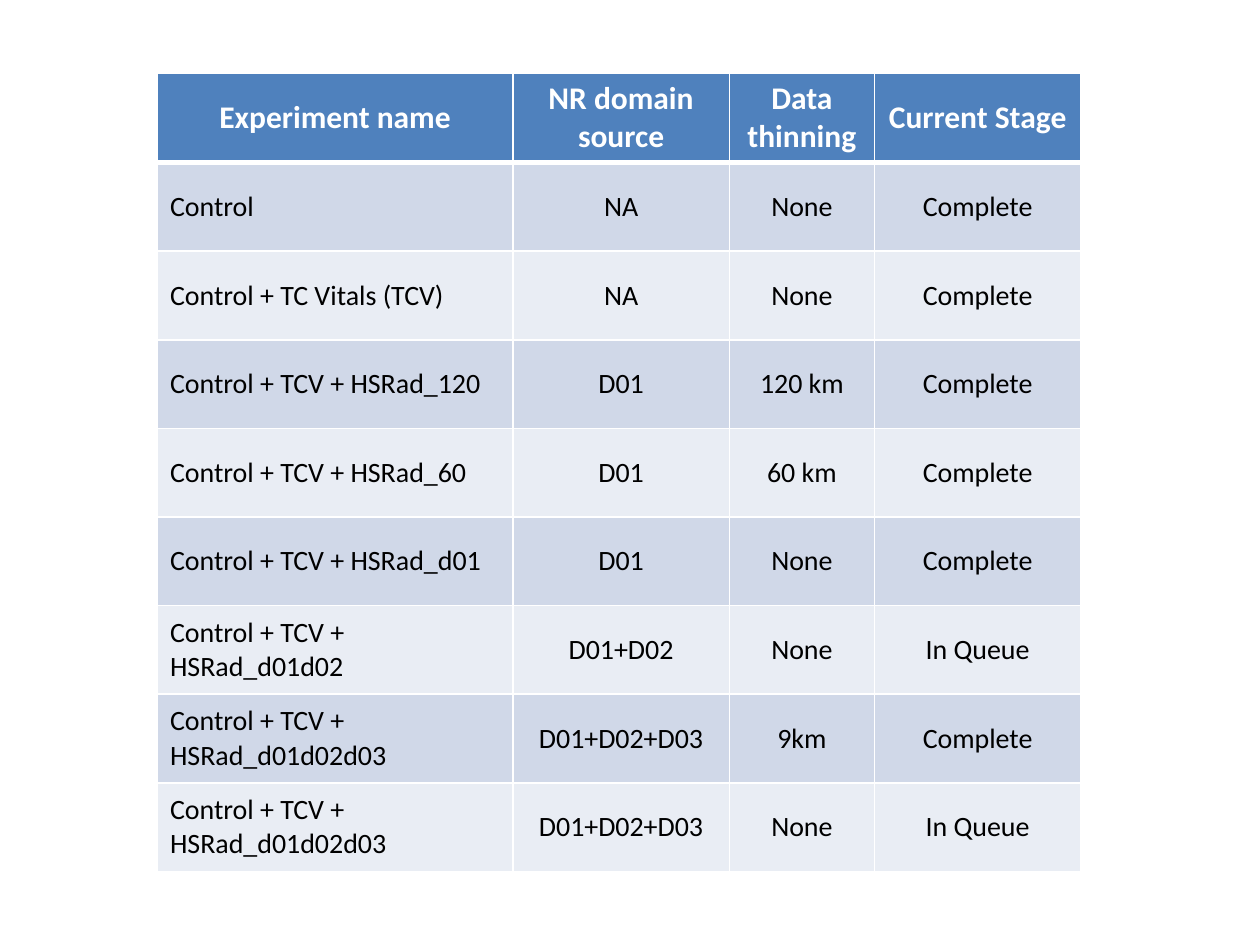
from typing import NamedTuple

from lxml import etree
from pptx import Presentation
from pptx.dml.color import RGBColor
from pptx.enum import text
from pptx.oxml.ns import qn
from pptx.util import Inches, Pt

WHITE = RGBColor(0xFF, 0xFF, 0xFF)
BLACK = RGBColor(0x00, 0x00, 0x00)
HEADER_BLUE = RGBColor(0x4F, 0x81, 0xBD)
BAND_DARK = RGBColor(0xD0, 0xD8, 0xE8)
BAND_LIGHT = RGBColor(0xE9, 0xED, 0xF4)


class Experiment(NamedTuple):
    name: str
    domain: str
    thinning: str
    stage: str


class CellStyle(NamedTuple):
    fill: RGBColor
    color: RGBColor
    size: int
    bold: bool


HEADER = Experiment("Experiment name", "NR domain source", "Data thinning", "Current Stage")
EXPERIMENTS = [
    Experiment("Control", "NA", "None", "Complete"),
    Experiment("Control + TC Vitals (TCV)", "NA", "None", "Complete"),
    Experiment("Control + TCV + HSRad_120", "D01", "120 km", "Complete"),
    Experiment("Control + TCV + HSRad_60", "D01", "60 km", "Complete"),
    Experiment("Control + TCV + HSRad_d01", "D01", "None", "Complete"),
    Experiment("Control + TCV + HSRad_d01d02", "D01+D02", "None", "In Queue"),
    Experiment("Control + TCV + HSRad_d01d02d03", "D01+D02+D03", "9km", "Complete"),
    Experiment("Control + TCV + HSRad_d01d02d03", "D01+D02+D03", "None", "In Queue"),
]
COLUMN_WIDTHS = [2.82, 1.72, 1.15, 1.64]

HEADER_STYLE = CellStyle(HEADER_BLUE, WHITE, 18, True)
BAND_STYLES = [CellStyle(fill, BLACK, 16, False) for fill in (BAND_DARK, BAND_LIGHT)]


def set_borders(cell, top: float, bottom: float) -> None:
    """Give the cell white borders, 1 pt wide at the sides."""
    tc_pr = cell._tc.get_or_add_tcPr()
    for side, width in (("L", 1), ("R", 1), ("T", top), ("B", bottom)):
        line = etree.SubElement(tc_pr, qn(f"a:ln{side}"), w=str(Pt(width)))
        fill = etree.SubElement(line, qn("a:solidFill"))
        etree.SubElement(fill, qn("a:srgbClr"), val=str(WHITE))


def fill_cell(cell, value: str, style: CellStyle, centred: bool) -> None:
    cell.fill.solid()
    cell.fill.fore_color.rgb = style.fill
    cell.vertical_anchor = text.MSO_ANCHOR.MIDDLE
    cell.text = value
    p = cell.text_frame.paragraphs[0]
    p.alignment = text.PP_ALIGN.CENTER if centred else text.PP_ALIGN.LEFT
    p.font.name = "Calibri"
    p.font.size = Pt(style.size)
    p.font.bold = style.bold
    p.font.color.rgb = style.color


def add_experiment_table(s) -> None:
    rows = [HEADER, *EXPERIMENTS]
    table = s.shapes.add_table(
        len(rows), len(COLUMN_WIDTHS),
        Inches(1.25), Inches(0.58), Inches(sum(COLUMN_WIDTHS)), Inches(6.33),
    ).table
    for column, width in zip(table.columns, COLUMN_WIDTHS):
        column.width = Inches(width)
    for i, row in enumerate(rows):
        is_header = i == 0
        style = HEADER_STYLE if is_header else BAND_STYLES[(i - 1) % 2]
        for j, value in enumerate(row):
            cell = table.cell(i, j)
            set_borders(cell, top=3 if i == 1 else 1, bottom=3 if is_header else 1)
            fill_cell(cell, value, style, centred=is_header or j > 0)


def main() -> None:
    prs = Presentation()
    prs.slide_width, prs.slide_height = Inches(10), Inches(7.5)
    s = prs.slides.add_slide(prs.slide_layouts[6])
    add_experiment_table(s)
    prs.save("out.pptx")


if __name__ == "__main__":
    main()
